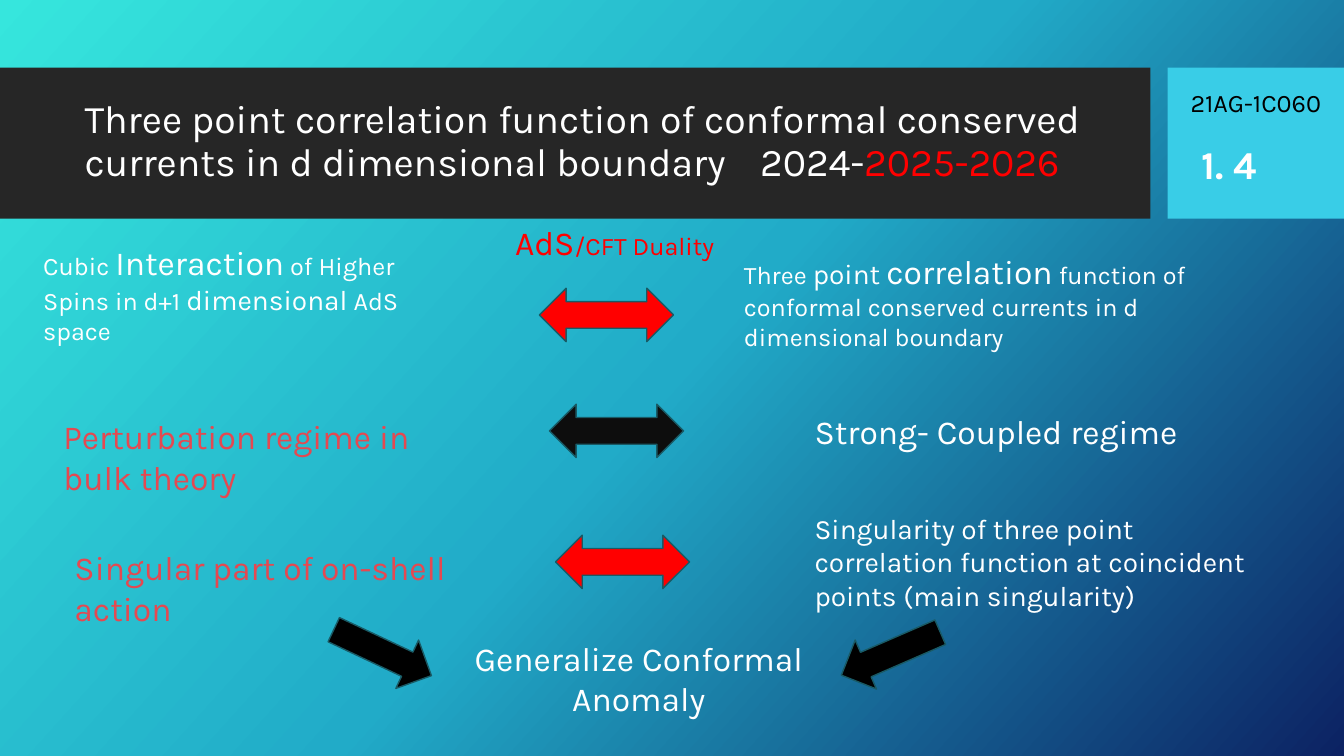
from copy import deepcopy

from pptx import Presentation
from pptx.dml.color import RGBColor
from pptx.enum.shapes import MSO_SHAPE as SHAPE
from pptx.enum.text import MSO_ANCHOR as ANCHOR, PP_ALIGN as ALIGN
from pptx.oxml import parse_xml
from pptx.oxml.ns import nsdecls, qn
from pptx.util import Inches, Pt

FONT = "Karla"
WHITE = RGBColor(0xFF, 0xFF, 0xFF)
BLACK = RGBColor(0x00, 0x00, 0x00)
RED = RGBColor(0xFF, 0x00, 0x00)
CORAL = RGBColor(0xE4, 0x49, 0x51)
CHARCOAL = RGBColor(0x26, 0x26, 0x26)
NEAR_BLACK = RGBColor(0x0D, 0x0D, 0x0D)
CYAN = RGBColor(0x39, 0xCD, 0xE7)
OUTLINE = RGBColor(0x19, 0x5A, 0x65)
BACKGROUND = [
    (0, RGBColor(0x36, 0xE6, 0xDD)),
    (0.5, RGBColor(0x21, 0xAB, 0xC8)),
    (1, RGBColor(0x0C, 0x22, 0x63)),
]

prs = Presentation()
prs.slide_width, prs.slide_height = Inches(13.33), Inches(7.5)
slide = prs.slides.add_slide(prs.slide_layouts[6])


def add_block(kind, box, fill, outline=None, rotation=0):
    block = slide.shapes.add_shape(kind, *map(Inches, box))
    block.shadow.inherit = False
    block.fill.solid()
    block.fill.fore_color.rgb = fill
    if outline is None:
        block.line.fill.background()
    else:
        block.line.color.rgb = outline
        block.line.width = Pt(1)
    block.rotation = rotation


def add_text(box, color, runs, bold=False):
    frame = slide.shapes.add_textbox(*map(Inches, box)).text_frame
    frame.word_wrap = True
    for text, size in runs:
        run = frame.paragraphs[0].add_run()
        run.text = text
        run.font.name = FONT
        run.font.size = Pt(size)
        run.font.bold = bold
        run.font.color.rgb = color
    return frame


# Background gradient with three stops
background = slide.background.fill
background.gradient()
background.gradient_angle = 318
stop_list = slide.element.find(".//" + qn("a:gsLst"))
stop_list.append(deepcopy(stop_list[-1]))
for stop, (position, color) in zip(background.gradient_stops, BACKGROUND):
    stop.position = position
    stop.color.rgb = color

# Header band and number tile
add_block(SHAPE.RECTANGLE, (0, 0.67, 11.41, 1.5), CHARCOAL)
add_block(SHAPE.RECTANGLE, (11.58, 0.67, 1.75, 1.5), CYAN)

# Title, with a tab stop ahead of the years
title = add_text((0.74, 0.82, 10.51, 1.18), WHITE, [
    ("Three point correlation function of conformal conserved "
     "currents in d dimensional boundary\t2024-", 28),
    ("2025-2026", 28),
])
title.vertical_anchor = ANCHOR.MIDDLE
heading = title.paragraphs[0]
heading.line_spacing = 0.9
heading.runs[-1].font.color.rgb = RED
heading._p.get_or_add_pPr().append(parse_xml(
    f'<a:tabLst {nsdecls("a")}><a:tab pos="{Inches(6.7)}" algn="l"/></a:tabLst>'))

# Project code and section number
add_text((11.71, 0.82, 1.59, 0.4), BLACK, [("21AG-1C060", 18)])
add_text((11.82, 1.34, 1.34, 0.57), WHITE, [("1. 4", 28)], bold=True)

# Bulk side
add_text((0.33, 2.35, 4.25, 1.14), WHITE, [
    ("Cubic ", 18), ("Interaction", 24), (" of Higher Spins in d+1 ", 18),
    ("dimensional", 20), (" AdS space", 18),
])
add_text((0.53, 4.08, 4.21, 0.91), CORAL, [("Perturbation regime in bulk theory", 24)])
add_text((0.64, 5.38, 4.21, 0.91), CORAL, [("Singular part of on-shell action", 24)])

# Boundary side
add_text((7.28, 2.44, 5.41, 1.11), WHITE, [
    ("Three ", 18), ("point", 20), (" ", 18), ("correlation", 24),
    (" function of conformal conserved currents in d dimensional boundary", 18),
])
add_text((7.98, 4.03, 4.71, 0.5), WHITE, [("Strong- Coupled regime", 24)])
add_text((7.98, 5.02, 4.71, 1.11), WHITE, [
    ("Singularity of three point correlation function at coincident "
     "points (main singularity)", 20),
])

# Duality label and arrows between the two sides
add_text((5.01, 2.15, 2.59, 0.5), RED, [("AdS", 24), ("/CFT Duality", 18)])
for left, top, fill in [(5.35, 2.86, RED), (5.45, 4.01, NEAR_BLACK), (5.51, 5.31, RED)]:
    add_block(SHAPE.LEFT_RIGHT_ARROW, (left, top, 1.33, 0.53), fill, OUTLINE)

# Both sides lead to the anomaly
for left, top, rotation in [(3.26, 6.21, 25.2), (8.3, 6.22, 156.5)]:
    add_block(SHAPE.RIGHT_ARROW, (left, top, 1.07, 0.53), BLACK, OUTLINE, rotation)
anomaly = add_text((4.43, 6.28, 3.81, 0.91), WHITE, [("Generalize Conformal Anomaly", 24)])
anomaly.paragraphs[0].alignment = ALIGN.CENTER

prs.save("out.pptx")
